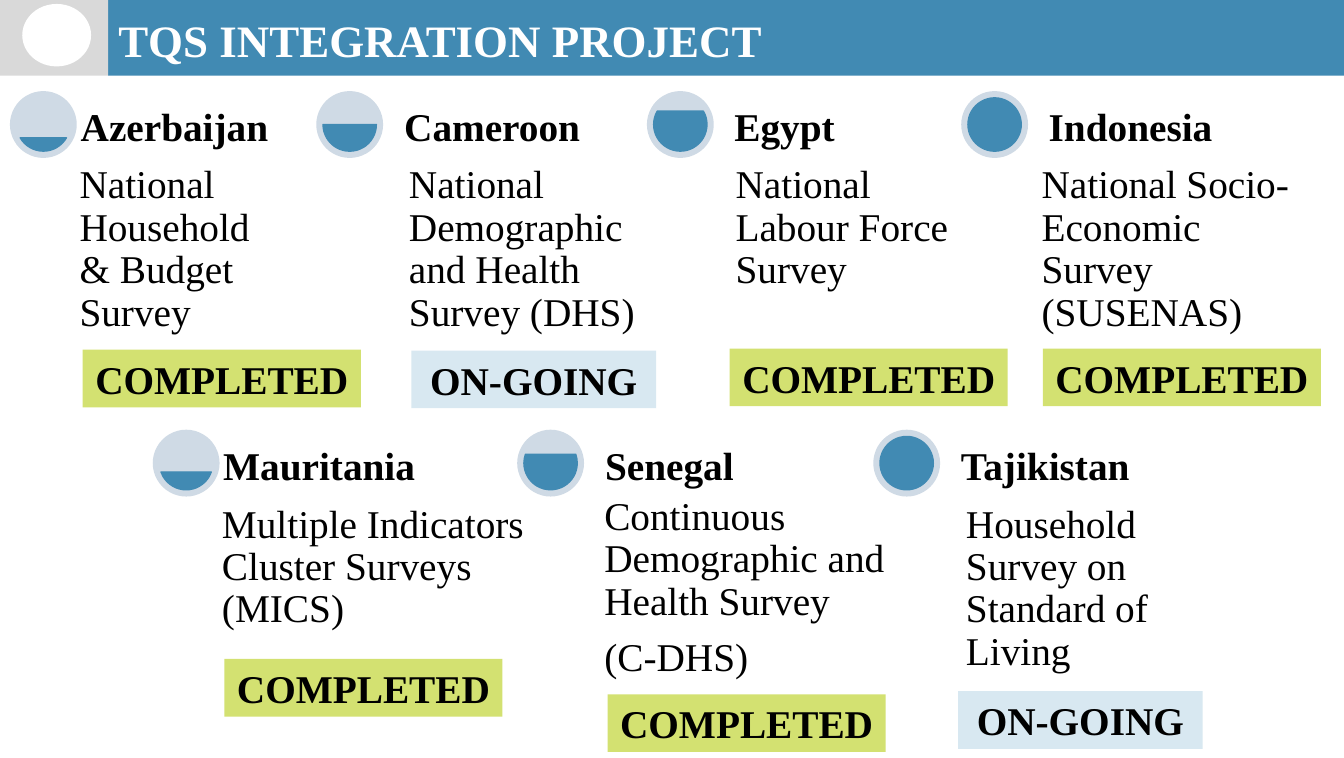
from math import asin, degrees

from pptx import Presentation
from pptx.dml.color import RGBColor
from pptx.enum.shapes import MSO_SHAPE
from pptx.enum.text import MSO_ANCHOR, MSO_AUTO_SIZE, PP_ALIGN
from pptx.util import Cm, Pt

FONT = "Times New Roman"
COLORS = {
    "blue": "418AB3", "gray": "D9D9D9", "white": "FFFFFF", "black": "000000",
    "ring": "CFDAE5", "green": "D3E171", "pale": "D8E8F1",
}
BADGES = {"COMPLETED": ("green", 6.99), "ON-GOING": ("pale", 6.15)}
DIAL, RIM, PAD = 1.68, 0.17, 0.2

# Each entry: dial left, level, name left, name, body (left, top, width, text), badge (left, top, text)
ROWS = {
    2.29: [
        (0.25, 1 / 4, 1.83, "Azerbaijan",
         (1.8, 3.94, 5.28, "National Household & Budget Survey"), (2.08, 8.79, "COMPLETED")),
        (7.95, 2 / 4, 9.96, "Cameroon",
         (10.08, 3.94, 6.93, "National Demographic and Health Survey (DHS)"), (10.34, 8.81, "ON-GOING")),
        (16.26, 3 / 4, 18.26, "Egypt",
         (18.29, 3.94, 6.15, "National Labour Force Survey"), (18.34, 8.76, "COMPLETED")),
        (24.16, 1, 26.16, "Indonesia",
         (25.98, 3.94, 7.14, "National Socio-Economic Survey (SUSENAS)"), (26.21, 8.76, "COMPLETED")),
    ],
    10.8: [
        (3.84, 1 / 3, 5.41, "Mauritania",
         (5.38, 12.47, 8.71, "Multiple Indicators Cluster Surveys (MICS)"), (5.64, 16.56, "COMPLETED")),
        (13, 2 / 3, 15.01, "Senegal",
         (14.99, 12.27, 8.26, "Continuous Demographic and Health Survey\n(C-DHS)"),
         (15.27, 17.45, "COMPLETED")),
        (21.95, 1, 23.95, "Tajikistan",
         (24.08, 12.47, 7.67, "Household Survey on Standard of Living"), (24.08, 17.37, "ON-GOING")),
    ],
}


def tint(name):
    """Return the named colour."""
    return RGBColor.from_string(COLORS[name])


def style(frame, size, color, bold):
    """Format every run in a text frame."""
    for para in frame.paragraphs:
        for run in para.runs:
            font = run.font
            font.name, font.size, font.bold = FONT, Pt(size), bold
            font.color.rgb = tint(color)


def add_form(slide, kind, left, top, width, height, color):
    """Add a flat preset shape without a line."""
    form = slide.shapes.add_shape(kind, Cm(left), Cm(top), Cm(width), Cm(height))
    form.shadow.inherit = False
    form.fill.solid()
    form.fill.fore_color.rgb = tint(color)
    form.line.fill.background()
    return form


def add_dial(slide, left, top, level):
    """Add a round gauge filled from below to the given level."""
    add_form(slide, MSO_SHAPE.OVAL, left, top, DIAL, DIAL, "ring")
    size = DIAL - 2 * RIM
    chord = add_form(slide, MSO_SHAPE.CHORD, left + RIM, top + RIM, size, size, "blue")
    chord.line.color.rgb = tint("blue")
    chord.line.width = Pt(1)
    start = degrees(asin(1 - 2 * level))
    for index, angle in enumerate((start, 180 - start)):
        chord.adjustments[index] = round(angle % 360, 2) * 0.6


def add_label(slide, left, top, width, height, text, bold=False):
    """Add a wrapped text box, bold ones resting on the bottom."""
    box = slide.shapes.add_textbox(Cm(left), Cm(top), Cm(width), Cm(height))
    frame = box.text_frame
    frame.word_wrap = True
    frame.margin_left = frame.margin_right = Cm(PAD)
    frame.margin_top = frame.margin_bottom = Cm(PAD)
    frame.vertical_anchor = MSO_ANCHOR.BOTTOM if bold else MSO_ANCHOR.TOP
    frame.text = text
    for para in frame.paragraphs:
        para.line_spacing = 0.9
        para.space_after = Pt(9.8)
    style(frame, 28, "black", bold)


def add_badge(slide, left, top, text):
    """Add a status badge."""
    color, width = BADGES[text]
    badge = add_form(slide, MSO_SHAPE.RECTANGLE, left, top, width, 1.45, color)
    frame = badge.text_frame
    frame.word_wrap = False
    frame.text = text
    frame.paragraphs[0].alignment = PP_ALIGN.CENTER
    style(frame, 28, "black", True)


def add_head(slide, text):
    """Add the header band and put the title on it."""
    add_form(slide, MSO_SHAPE.RECTANGLE, 2.72, 0, 31.06, 1.9, "blue")
    add_form(slide, MSO_SHAPE.RECTANGLE, 0, 0, 2.72, 1.9, "gray")
    add_form(slide, MSO_SHAPE.OVAL, 0.56, 0.1, 1.73, 1.57, "white")
    title = slide.shapes.title
    title.left, title.top, title.width, title.height = Cm(2.72), Cm(0.15), Cm(31.06), Cm(1.68)
    frame = title.text_frame
    frame.text = text
    frame.auto_size = MSO_AUTO_SIZE.NONE
    frame.vertical_anchor = MSO_ANCHOR.MIDDLE
    frame.paragraphs[0].alignment = PP_ALIGN.LEFT
    style(frame, 32, "white", True)
    title.element.getparent().append(title.element)


def main():
    """Build and save the slide."""
    deck = Presentation()
    deck.slide_width, deck.slide_height = Cm(33.78), Cm(19.05)
    slide = deck.slides.add_slide(deck.slide_layouts[5])
    add_head(slide, "TQS INTEGRATION PROJECT")
    for top, row in ROWS.items():
        for dial, level, left, name, (x, y, width, text), badge in row:
            add_dial(slide, dial, top, level)
            add_label(slide, x, y, width, 6.3, text)
            add_label(slide, left, top, 5.77, DIAL, name, bold=True)
            add_badge(slide, *badge)
    deck.save("out.pptx")


if __name__ == "__main__":
    main()
